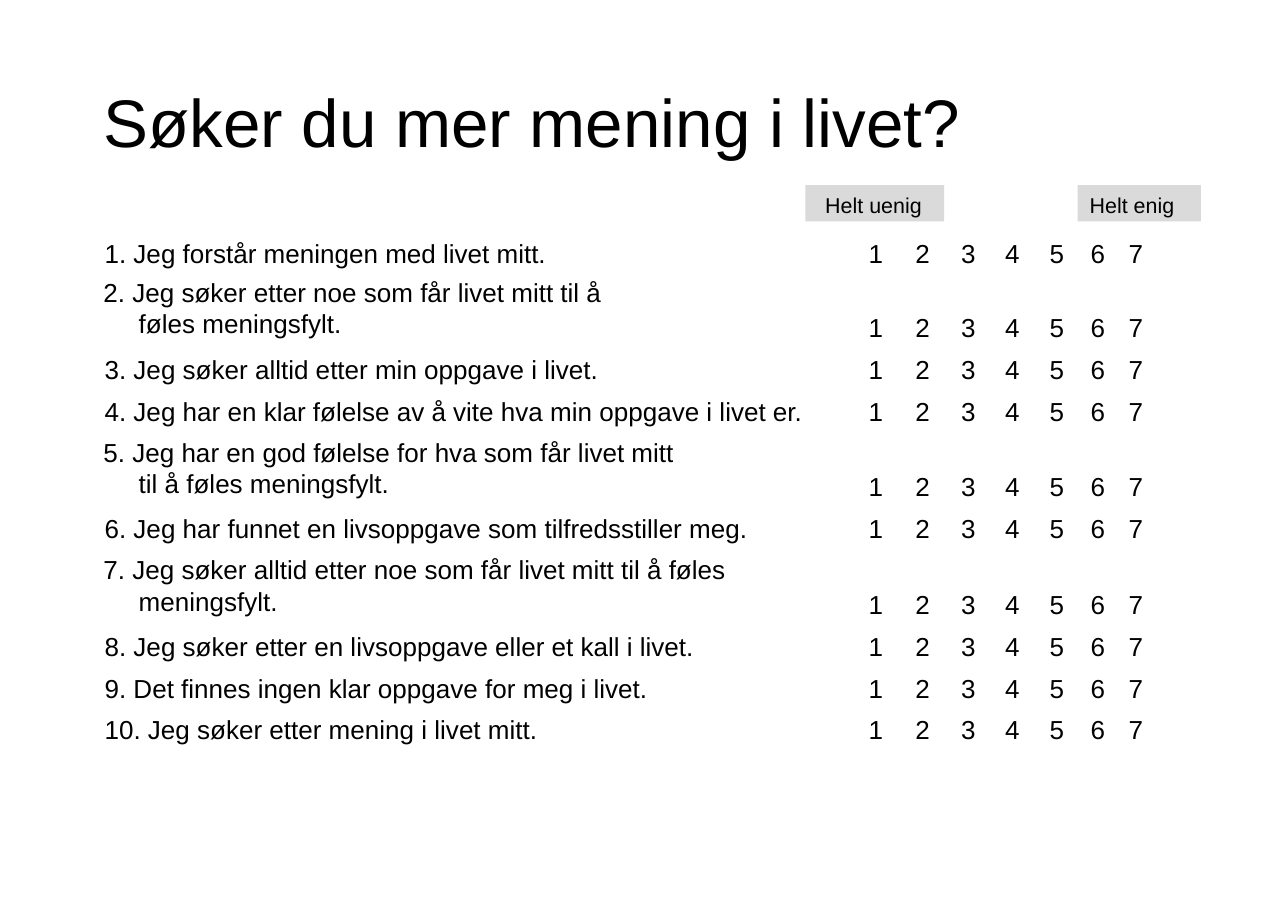
from dataclasses import dataclass

from pptx import Presentation
from pptx.dml.color import RGBColor
from pptx.enum.shapes import MSO_SHAPE
from pptx.enum.text import MSO_ANCHOR, MSO_AUTO_SIZE, PP_ALIGN
from pptx.slide import Slide
from pptx.table import _Cell
from pptx.text.text import TextFrame, _Paragraph
from pptx.util import Inches, Pt

WIDTH, HEIGHT = Inches(11.69), Inches(8.28)
BLACK, GREY = "000000", "DADADA"


@dataclass(frozen=True)
class ScaleLabel:
    text: str
    left: float
    width: float
    inset: float


@dataclass(frozen=True)
class ScoreColumn:
    """Width and side insets of one answer column, in percent of the slide's width."""
    width: float
    left: float = 0
    right: float = 0
    align: PP_ALIGN = PP_ALIGN.CENTER


@dataclass(frozen=True)
class RowStyle:
    """Height and top insets in percent of the height, indents in percent of the width."""
    height: float
    text_top: float
    score_top: float
    indent: float = 0.34
    hanging: float = 0
    line_spacing: float = 1


@dataclass(frozen=True)
class Statement:
    text: str
    style: RowStyle
    right: float = 0


LABELS = [
    ScaleLabel("Helt uenig", 62.53, 10.78, 1.54),
    ScaleLabel("Helt enig", 83.66, 9.58, 0.94),
]
STATEMENT_WIDTH = 57.06
SCORES = [
    ScoreColumn(4.96, right=1.24, align=PP_ALIGN.RIGHT),
    ScoreColumn(3.59, left=0.09),
    ScoreColumn(3.51, left=0.09),
    ScoreColumn(3.42),
    ScoreColumn(3.34, left=0.17),
    ScoreColumn(3.08, left=0.09),
    ScoreColumn(2.31, left=0.6),
]
FIRST = RowStyle(3.86, 0, 0)
SINGLE = RowStyle(4.59, 0.48, 0.48)
DOUBLE = RowStyle(8.33, 0.12, 4.2, indent=2.99, hanging=2.74, line_spacing=1.08)
LAST = RowStyle(3.86, 0.36, 0.36)
STATEMENTS = [
    Statement("1. Jeg forstår meningen med livet mitt.", FIRST),
    Statement("2. Jeg søker etter noe som får livet mitt til å føles meningsfylt.", DOUBLE, 15.6),
    Statement("3. Jeg søker alltid etter min oppgave i livet.", SINGLE),
    Statement("4. Jeg har en klar følelse av å vite hva min oppgave i livet er.", SINGLE),
    Statement("5. Jeg har en god følelse for hva som får livet mitt til å føles meningsfylt.",
              DOUBLE, 11.4),
    Statement("6. Jeg har funnet en livsoppgave som tilfredsstiller meg.", SINGLE),
    Statement("7. Jeg søker alltid etter noe som får livet mitt til å føles meningsfylt.",
              DOUBLE, 5),
    Statement("8. Jeg søker etter en livsoppgave eller et kall i livet.", SINGLE),
    Statement("9. Det finnes ingen klar oppgave for meg i livet.", SINGLE),
    Statement("10. Jeg søker etter mening i livet mitt.", LAST),
]


def across(percent: float) -> int:
    return round(WIDTH * percent / 100)


def down(percent: float) -> int:
    return round(HEIGHT * percent / 100)


def color(value: str) -> RGBColor:
    return RGBColor.from_string(value)


def set_insets(holder: TextFrame | _Cell, left: float, top: float, right: float = 0) -> None:
    holder.margin_left, holder.margin_right = across(left), across(right)
    holder.margin_top, holder.margin_bottom = down(top), 0


def write(para: _Paragraph, text: str, size: float, align: PP_ALIGN = PP_ALIGN.LEFT) -> None:
    para.alignment = align
    span = para.add_run()
    span.text = text
    span.font.name, span.font.size = "Arial", Pt(size)
    span.font.color.rgb = color(BLACK)


def add_title(page: Slide) -> None:
    title = page.shapes.title
    title.left, title.top = across(7.96), down(8.45)
    title.width, title.height = across(66.81), down(9.18)
    frame = title.text_frame
    frame.word_wrap = True
    frame.auto_size = MSO_AUTO_SIZE.NONE
    frame.vertical_anchor = MSO_ANCHOR.BOTTOM
    set_insets(frame, 0.09, 0.12)
    write(frame.paragraphs[0], "Søker du mer mening i livet?", 44)


def add_label(page: Slide, label: ScaleLabel) -> None:
    box = page.shapes.add_shape(MSO_SHAPE.RECTANGLE, across(label.left), down(20.29),
                                across(label.width), down(3.99))
    box.shadow.inherit = False
    box.fill.solid()
    box.fill.fore_color.rgb = color(GREY)
    box.line.fill.background()
    frame = box.text_frame
    frame.word_wrap = True
    frame.vertical_anchor = MSO_ANCHOR.TOP
    set_insets(frame, label.inset, 0.79)
    write(frame.paragraphs[0], label.text, 14)


def fill_statement(cell: _Cell, statement: Statement) -> None:
    style = statement.style
    set_insets(cell, 0, style.text_top, statement.right)
    para = cell.text_frame.paragraphs[0]
    properties = para._p.get_or_add_pPr()
    properties.set("marL", str(across(style.indent)))
    properties.set("indent", str(-across(style.hanging)))
    para.line_spacing = style.line_spacing
    write(para, statement.text, 17)


def add_questionnaire(page: Slide) -> None:
    widths = [STATEMENT_WIDTH] + [score.width for score in SCORES]
    heights = [statement.style.height for statement in STATEMENTS]
    table = page.shapes.add_table(len(heights), len(widths), across(7.78), down(26.33),
                                  across(sum(widths)), down(sum(heights))).table
    table.first_row = table.horz_banding = False
    for column, width in zip(table.columns, widths):
        column.width = across(width)
    for row, statement in zip(table.rows, STATEMENTS):
        row.height = down(statement.style.height)
        for cell in row.cells:
            cell.fill.background()
        fill_statement(row.cells[0], statement)
        for number, score in enumerate(SCORES, start=1):
            cell = row.cells[number]
            set_insets(cell, score.left, statement.style.score_top, score.right)
            write(cell.text_frame.paragraphs[0], str(number), 17, score.align)


def main() -> None:
    deck = Presentation()
    deck.slide_width, deck.slide_height = WIDTH, HEIGHT
    page = deck.slides.add_slide(deck.slide_layouts[5])
    for label in LABELS:
        add_label(page, label)
    add_title(page)
    add_questionnaire(page)
    deck.save("out.pptx")


if __name__ == "__main__":
    main()
